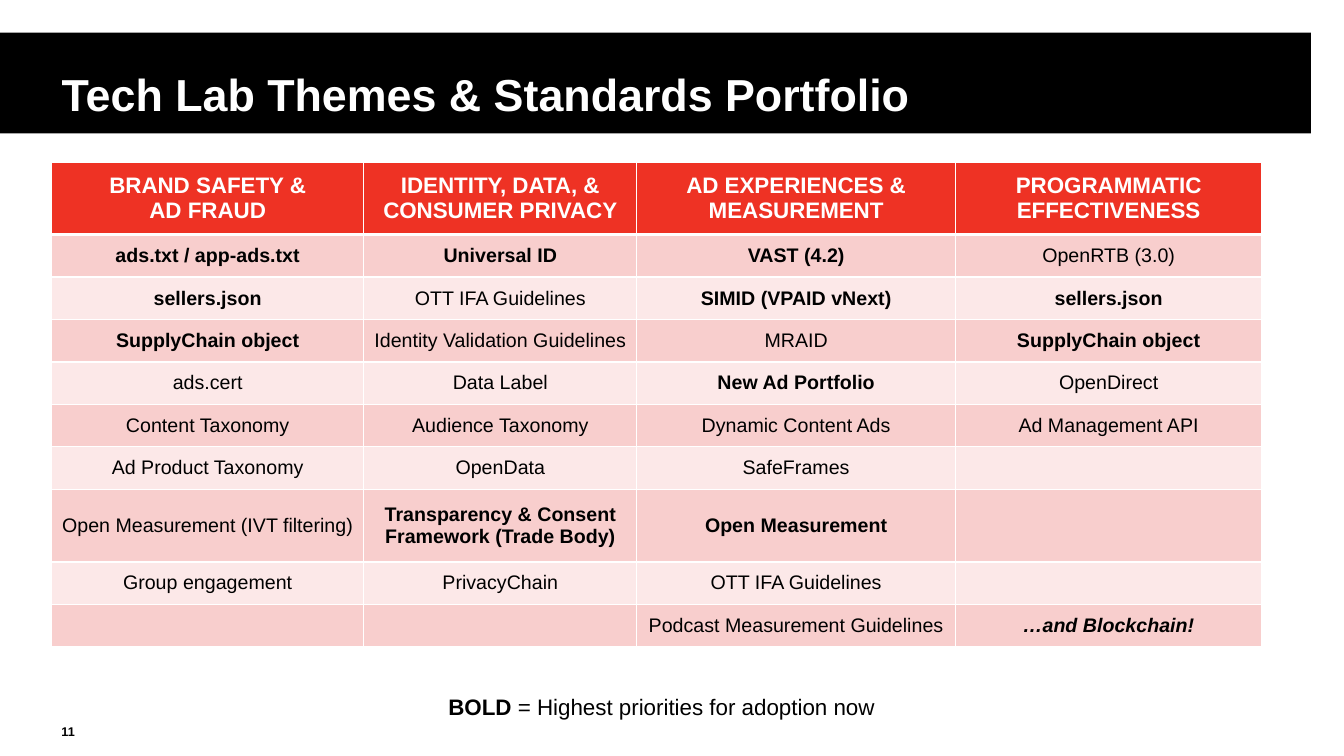
from lxml.etree import SubElement
from pptx import Presentation
from pptx.dml.color import RGBColor
from pptx.enum.shapes import MSO_SHAPE
from pptx.enum.text import MSO_ANCHOR, PP_ALIGN
from pptx.oxml.ns import qn
from pptx.util import Cm, Pt

BLACK = RGBColor(0x00, 0x00, 0x00)
WHITE = RGBColor(0xFF, 0xFF, 0xFF)
RED = RGBColor(0xEE, 0x32, 0x24)
ROSE = RGBColor(0xF8, 0xCE, 0xCD)
BLUSH = RGBColor(0xFC, 0xE8, 0xE8)

FONT = "Arial"
PAD = Cm(0.13)
COLS = [7.87, 6.88, 8.03, 7.72]
LOW, TALL = 1.07, 1.83
TALL_ROWS = (0, 7)

# A leading * marks a priority in bold; ** adds italics.
ROWS = [
    ["*BRAND SAFETY &\vAD FRAUD", "*IDENTITY, DATA, &\vCONSUMER PRIVACY",
     "*AD EXPERIENCES &\vMEASUREMENT", "*PROGRAMMATIC EFFECTIVENESS"],
    ["*ads.txt / app-ads.txt", "*Universal ID", "*VAST (4.2)", "OpenRTB (3.0)"],
    ["*sellers.json", "OTT IFA Guidelines", "*SIMID (VPAID vNext)", "*sellers.json"],
    ["*SupplyChain object", "Identity Validation Guidelines", "MRAID",
     "*SupplyChain object"],
    ["ads.cert", "Data Label", "*New Ad Portfolio", "OpenDirect"],
    ["Content Taxonomy", "Audience Taxonomy", "Dynamic Content Ads",
     "Ad Management API"],
    ["Ad Product Taxonomy", "OpenData", "SafeFrames", ""],
    ["Open Measurement (IVT filtering)",
     "*Transparency & Consent Framework (Trade Body)", "*Open Measurement", ""],
    ["Group engagement", "PrivacyChain", "OTT IFA Guidelines", ""],
    ["", "", "Podcast Measurement Guidelines", "**…and Blockchain!"],
]


def style(run, size, color, bold=False, italic=False):
    """Format one run."""
    font = run.font
    font.name, font.size = FONT, Pt(size)
    font.bold, font.italic = bold, italic
    font.color.rgb = color


def banner(slide, left, top, width, height):
    """Draw the black band and set the title on it."""
    bar = slide.shapes.add_shape(MSO_SHAPE.RECTANGLE, left, top, width, height)
    bar.shadow.inherit = False
    bar.fill.solid()
    bar.fill.fore_color.rgb = BLACK
    bar.line.fill.background()
    title = slide.shapes.title
    title._element.addprevious(bar._element)
    title.left, title.top = left + Cm(1.3), top + Cm(0.3)
    title.width, title.height = width - Cm(2.51), height - Cm(0.48)
    frame = title.text_frame
    frame.text = "Tech Lab Themes & Standards Portfolio"
    frame.vertical_anchor = MSO_ANCHOR.BOTTOM
    para = frame.paragraphs[0]
    para.alignment = PP_ALIGN.LEFT
    para.line_spacing, para.space_after = 0.85, Pt(6)
    style(para.runs[0], 32, WHITE, bold=True)


def edge(cell, side, width):
    """Add a white border to one side of a cell."""
    line = SubElement(cell._tc.get_or_add_tcPr(), qn("a:ln" + side), w=str(Pt(width)))
    fill = SubElement(line, qn("a:solidFill"))
    SubElement(fill, qn("a:srgbClr"), val=str(WHITE))


def fill_cell(cell, text, row):
    """Set the borders, fill and text of one cell."""
    for side in "LRTB":
        thick = (row, side) in ((0, "B"), (1, "T"))
        edge(cell, side, 3 if thick else 1)
    cell.fill.solid()
    cell.fill.fore_color.rgb = RED if row == 0 else ROSE if row % 2 else BLUSH
    cell.margin_left = cell.margin_right = PAD
    cell.margin_top = cell.margin_bottom = PAD
    cell.vertical_anchor = MSO_ANCHOR.MIDDLE
    if not text:
        return
    cell.text_frame.text = text.lstrip("*")
    para = cell.text_frame.paragraphs[0]
    para.alignment = PP_ALIGN.CENTER
    for run in para.runs:
        style(run, 14 if row else 16, BLACK if row else WHITE,
              text.startswith("*"), text.startswith("**"))


def grid(slide, left, top, width, height):
    """Build the table of standards under their themes."""
    table = slide.shapes.add_table(
        len(ROWS), len(COLS), left, top, width, height).table
    for col, size in zip(table.columns, COLS):
        col.width = Cm(size)
    for i, texts in enumerate(ROWS):
        table.rows[i].height = Cm(TALL if i in TALL_ROWS else LOW)
        for j, text in enumerate(texts):
            fill_cell(table.cell(i, j), text, i)


def label(slide, parts, size, align, anchor, left, top, width, height):
    """Place a one-line text made of (text, bold) parts."""
    frame = slide.shapes.add_textbox(left, top, width, height).text_frame
    frame.word_wrap = True
    frame.vertical_anchor = anchor
    frame.margin_top = frame.margin_bottom = PAD
    para = frame.paragraphs[0]
    para.alignment, para.line_spacing = align, 0.85
    for text, bold in parts:
        run = para.add_run()
        run.text = text
        style(run, size, BLACK, bold)


def main():
    """Build the slide and save it."""
    deck = Presentation()
    deck.slide_width, deck.slide_height = Cm(33.87), Cm(19.05)
    slide = deck.slides.add_slide(deck.slide_layouts[5])
    banner(slide, Cm(0), Cm(0.82), Cm(33.04), Cm(2.54))
    grid(slide, Cm(1.3), Cm(4.08), Cm(30.5), Cm(12.22))
    label(slide, [("11", True)], 9, PP_ALIGN.LEFT, MSO_ANCHOR.MIDDLE,
          Cm(1.3), Cm(18), Cm(1.1), Cm(0.9))
    note = [("BOLD ", True), ("= Highest priorities for adoption now", False)]
    label(slide, note, 16, PP_ALIGN.CENTER, MSO_ANCHOR.TOP,
          Cm(2.5), Cm(17.45), Cm(28.35), Cm(0.9))
    deck.save("out.pptx")


if __name__ == "__main__":
    main()
